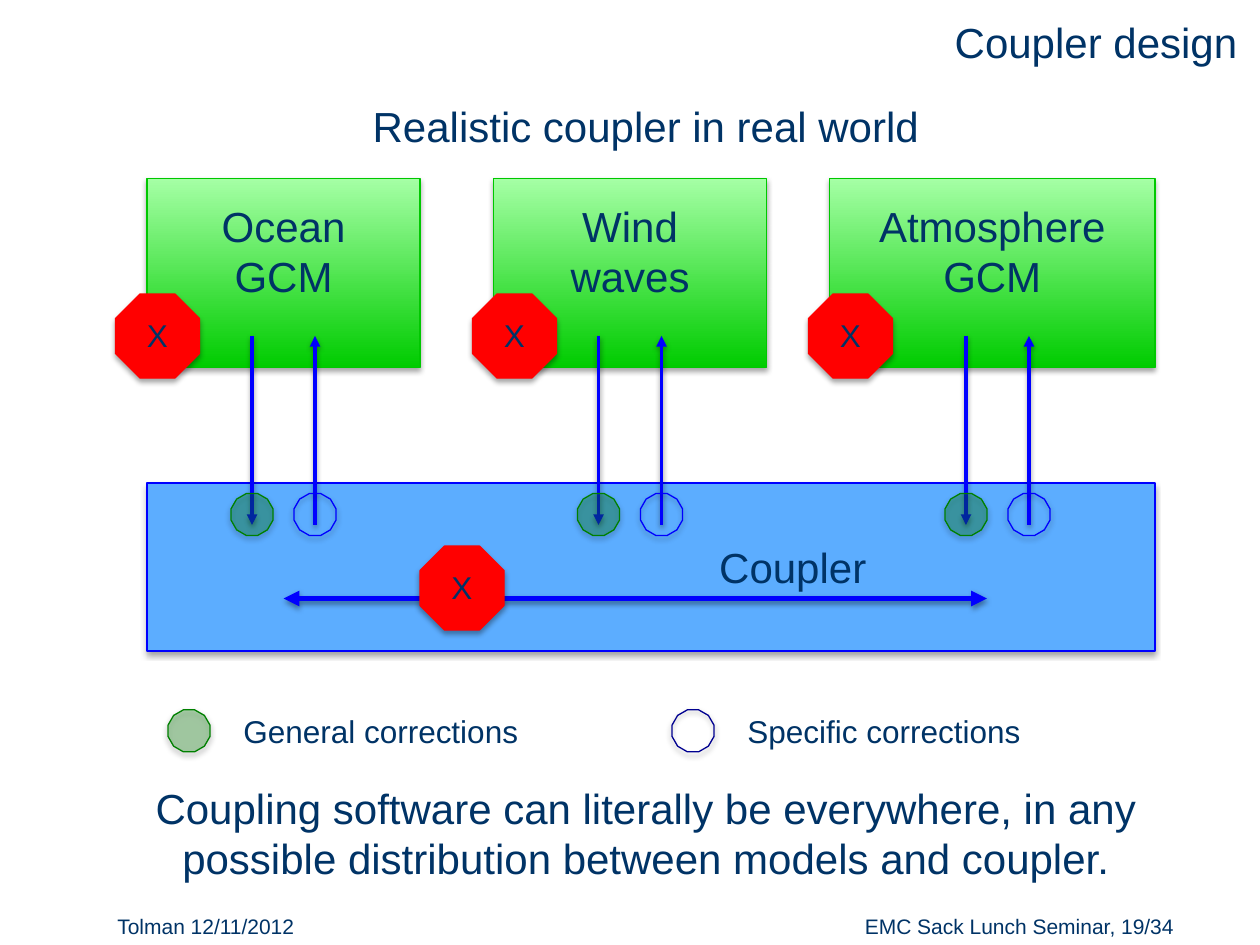
import pptx
import pptx.util
import pptx.oxml
import pptx.oxml.ns
from pptx.dml.color import RGBColor
from pptx.enum.shapes import MSO_CONNECTOR, MSO_SHAPE
from pptx.enum.text import MSO_ANCHOR, MSO_AUTO_SIZE, PP_ALIGN

NAVY = RGBColor(0x00, 0x33, 0x66)
BLUE = RGBColor(0x00, 0x00, 0xFF)
DARK_BLUE = RGBColor(0x00, 0x00, 0x90)
SKY = RGBColor(0x5C, 0xAD, 0xFF)
RED = RGBColor(0xFF, 0x00, 0x00)
GREEN = RGBColor(0x00, 0x80, 0x00)
MODEL_LINE = RGBColor(0x00, 0xC8, 0x00)
MODEL_DARK = RGBColor(0x00, 0xCC, 0x00)
MODEL_LIGHT = RGBColor(0xA5, 0xFF, 0xA5)

# The slide is a grid of 120 columns by 90 rows
CELL = pptx.util.Inches(10) // 120
STOP_SIZE = 8
DOT_SIZE = 4
DOT_ROW = 47
LEGEND_ROW = 67.6

# Label, left column, width, label width, first arrow column, stop sign column
MODELS = [
    ("Ocean GCM", 14, 26, 22, 24, 11),
    ("Wind waves", 47, 26, 22, 57, 45),
    ("Atmosphere GCM", 79, 31, 26.3, 92, 77),
]
ARROW_GAP = 6


def grid(*values):
    return [round(value * CELL) for value in values]


def add_shadow(shape, opacity, distance):
    effects = pptx.oxml.parse_xml(
        f'<a:effectLst {pptx.oxml.ns.nsdecls("a")}>'
        f'<a:outerShdw blurRad="{pptx.util.Pt(3.1)}" dist="{pptx.util.Pt(distance)}" '
        'dir="5400000" rotWithShape="0"><a:srgbClr val="000000">'
        f'<a:alpha val="{opacity * 1000}"/></a:srgbClr></a:outerShdw></a:effectLst>')
    shape._element.spPr.append(effects)


def add_text(slide, text, column, row, width, height, size=24,
             alignment=PP_ALIGN.CENTER, anchor=MSO_ANCHOR.TOP):
    box = slide.shapes.add_textbox(*grid(column, row, width, height))
    frame = box.text_frame
    frame.word_wrap = True
    frame.auto_size = MSO_AUTO_SIZE.SHAPE_TO_FIT_TEXT
    frame.vertical_anchor = anchor
    paragraph = frame.paragraphs[0]
    paragraph.alignment = alignment
    run = paragraph.add_run()
    run.text = text
    run.font.name = "Arial"
    run.font.size = pptx.util.Pt(size)
    run.font.color.rgb = NAVY


def add_block(slide, kind, column, row, width, height, line, fill=None):
    shape = slide.shapes.add_shape(kind, *grid(column, row, width, height))
    if fill is None:
        shape.fill.background()
    else:
        shape.fill.solid()
        shape.fill.fore_color.rgb = fill
    shape.line.color.rgb = line
    shape.line.width = pptx.util.Pt(0.75)
    add_shadow(shape, 35, 1.8)
    return shape


def add_arrow(slide, start, end, width, ends):
    arrow = slide.shapes.add_connector(MSO_CONNECTOR.STRAIGHT, *grid(*start, *end))
    arrow.line.color.rgb = BLUE
    arrow.line.width = pptx.util.Pt(width)
    line = arrow.line._get_or_add_ln()
    for end_name in ends:
        line.append(pptx.oxml.parse_xml(
            f'<a:{end_name} {pptx.oxml.ns.nsdecls("a")} type="triangle"/>'))
    add_shadow(arrow, 38, 1.6)


def add_model(slide, label, column, width, label_width):
    box = add_block(slide, MSO_SHAPE.RECTANGLE, column, 17, width, 18, MODEL_LINE)
    box.fill.gradient()
    box.fill.gradient_angle = 90
    for stop, color, position in zip(box.fill.gradient_stops,
                                     (MODEL_DARK, MODEL_LIGHT), (0, 1)):
        stop.color.rgb = color
        stop.position = position
    add_text(slide, label, column + (width - label_width) / 2, 18.5, label_width, 10.9)


def add_stop_sign(slide, column, row):
    add_block(slide, MSO_SHAPE.OCTAGON, column, row, STOP_SIZE, STOP_SIZE, RED, RED)
    add_text(slide, "X", column + 1, row + 1.55, STOP_SIZE - 2, 4.9, size=18)


def add_general_dot(slide, center, row):
    dot = add_block(slide, MSO_SHAPE.DODECAGON, center - DOT_SIZE / 2, row,
                    DOT_SIZE, DOT_SIZE, GREEN, GREEN)
    color = dot._element.spPr.find(
        f'{pptx.oxml.ns.qn("a:solidFill")}/{pptx.oxml.ns.qn("a:srgbClr")}')
    color.append(pptx.oxml.parse_xml(
        f'<a:alpha {pptx.oxml.ns.nsdecls("a")} val="30000"/>'))


def add_specific_dot(slide, center, row, line=BLUE):
    add_block(slide, MSO_SHAPE.DODECAGON, center - DOT_SIZE / 2, row,
              DOT_SIZE, DOT_SIZE, line)


def main():
    presentation = pptx.Presentation()
    presentation.slide_width, presentation.slide_height = grid(120, 90)
    slide = presentation.slides.add_slide(presentation.slide_layouts[6])

    # Footer and headings
    add_text(slide, "Tolman 12/11/2012", 10, 86.4, 36, 3.6, 12, PP_ALIGN.LEFT)
    add_text(slide, "EMC Sack Lunch Seminar, 19/34", 73, 86.4, 40, 3.6, 12,
             PP_ALIGN.RIGHT)
    add_text(slide, "Coupler design", 49, 1, 70, 6, alignment=PP_ALIGN.RIGHT,
             anchor=MSO_ANCHOR.MIDDLE)
    add_text(slide, "Realistic coupler in real world", 13, 9, 97, 6)

    # Models and coupler
    for label, column, width, label_width, _, _ in MODELS:
        add_model(slide, label, column, width, label_width)
    add_block(slide, MSO_SHAPE.RECTANGLE, 14, 46, 96, 16, BLUE, SKY)

    # Exchange between models and coupler
    for *_, arrow, _ in MODELS:
        add_arrow(slide, (arrow, 32), (arrow, 50), 2, ["tailEnd"])
        back = arrow + ARROW_GAP
        add_arrow(slide, (back, 32), (back, 50), 2, ["headEnd"])
    add_text(slide, "Coupler", 56, 51, 39, 6)
    add_arrow(slide, (27, 57), (94, 57), 3, ["headEnd", "tailEnd"])

    # Conclusion
    add_text(slide, "Coupling software can literally be everywhere, in any "
             "possible distribution between models and coupler.", 13, 73.9, 97, 10.9)

    # Stop signs and correction dots
    for *_, arrow, stop_sign in MODELS:
        add_stop_sign(slide, stop_sign, 28)
        add_general_dot(slide, arrow, DOT_ROW)
        add_specific_dot(slide, arrow + ARROW_GAP, DOT_ROW)
    add_stop_sign(slide, 40, 52)

    # Legend
    add_general_dot(slide, 18, LEGEND_ROW)
    add_specific_dot(slide, 66, LEGEND_ROW, DARK_BLUE)
    for label, column in (("General corrections", 22), ("Specific corrections", 70)):
        add_text(slide, label, column, LEGEND_ROW - 0.4, 31, 4.8, 18, PP_ALIGN.LEFT)

    presentation.save("out.pptx")


if __name__ == "__main__":
    main()
